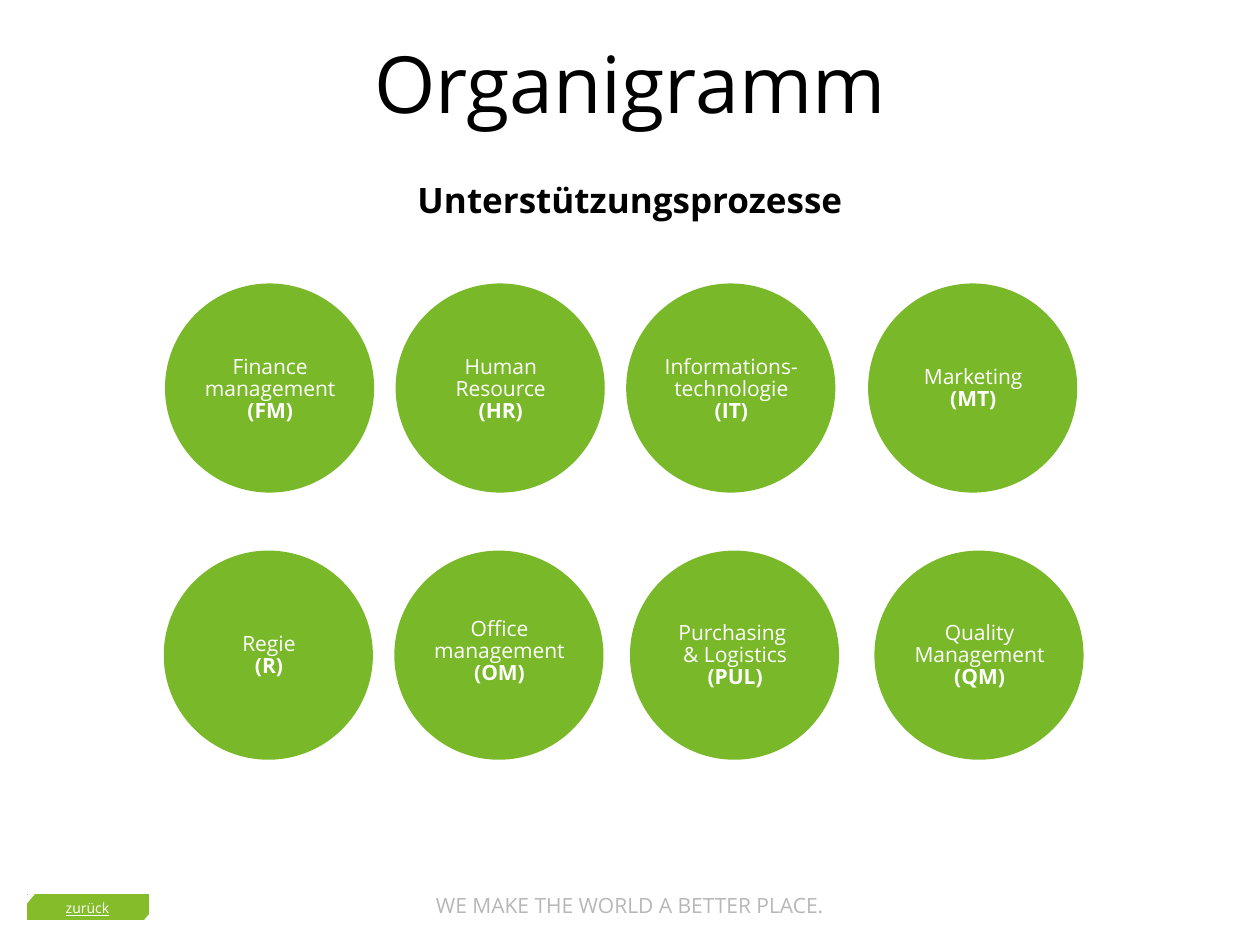
"""Build the Organigramm slide with its eight support processes."""
from pptx import Presentation
from pptx.dml.color import RGBColor
from pptx.enum.shapes import MSO_SHAPE
from pptx.enum.text import MSO_ANCHOR, PP_ALIGN
from pptx.util import Inches, Pt

CENTER, TOP = PP_ALIGN.CENTER, MSO_ANCHOR.TOP
OVAL, RECT = MSO_SHAPE.OVAL, MSO_SHAPE.RECTANGLE

THEME = {
    "font": "Open Sans",
    "black": RGBColor(0x00, 0x00, 0x00),
    "white": RGBColor(0xFF, 0xFF, 0xFF),
    "gray": RGBColor(0xB7, 0xB7, 0xB7),
    "green": RGBColor(0x79, 0xB8, 0x29),
    "button": RGBColor(0x84, 0xBC, 0x2A),
    "title": Pt(45),
    "subtitle": Pt(20),
    "label": Pt(12),
    "link": Pt(8),
}


def write(sp, lines, size, color, spacing=1.0, inset=0.1):
    tf = sp.text_frame
    tf.word_wrap = True
    tf.vertical_anchor = TOP
    tf.margin_left = tf.margin_right = Inches(0.1)
    tf.margin_top = tf.margin_bottom = Inches(inset)
    for i, line in enumerate(lines):
        p = tf.add_paragraph() if i else tf.paragraphs[0]
        p.text = line
        p.alignment = CENTER
        p.line_spacing = spacing
        p.font.name = THEME["font"]
        p.font.size = THEME[size]
        p.font.color.rgb = THEME[color]
        p.font.bold = False
    return tf.paragraphs[-1]


def add_solid(shapes, kind, box, color):
    sp = shapes.add_shape(kind, *map(Inches, box))
    sp.shadow.inherit = False
    sp.fill.solid()
    sp.fill.fore_color.rgb = THEME[color]
    sp.line.fill.background()
    return sp


prs = Presentation()
prs.slide_width, prs.slide_height = Inches(10), Inches(7.5)
s = prs.slides.add_slide(prs.slide_layouts[5])

tagline = s.shapes.add_textbox(Inches(0), Inches(6.98), Inches(10), Inches(0.31))
write(tagline, ["WE MAKE THE WORLD A BETTER PLACE."], "label", "gray")

title = s.shapes.title
title.left, title.top = Inches(0.34), Inches(0.23)
title.width, title.height = Inches(9.32), Inches(1.66)
write(title, ["Organigramm"], "title", "black", 0.95)

subtitle = s.shapes.add_textbox(Inches(0), Inches(1.34), Inches(10), Inches(0.63))
write(subtitle, ["Unterstützungsprozesse"], "subtitle", "black", 0.95).font.bold = True

rows = [
    (2.25, [
        (1.31, 2.73, ["Finance\nmanagement", "(FM)"]),
        (3.14, 2.73, ["Human", "Resource", "(HR)"]),
        (4.97, 2.73, ["Informations-", "technologie", "(IT)"]),
        (6.89, 2.81, ["Marketing", "(MT)"]),
    ]),
    (4.37, [
        (1.30, 4.93, ["Regie", "(R)"]),
        (3.13, 4.81, ["Office\nmanagement", "(OM)"]),
        (5.00, 4.84, ["Purchasing ", "& Logistics", "(PUL)"]),
        (6.94, 4.84, ["Quality", "Management", "(QM)"]),
    ]),
]
for top, processes in rows:
    for left, label_top, lines in processes:
        add_solid(s.shapes, OVAL, (left, top, 1.66, 1.66), "green")
for top, processes in rows:
    for left, label_top, lines in processes:
        label = s.shapes.add_textbox(
            Inches(left + 0.02), Inches(label_top), Inches(1.63), Inches(0.75))
        write(label, lines, "label", "white", 0.88).font.bold = True

button = s.shapes.add_group_shape()
face = add_solid(button.shapes, RECT, (0.22, 7.1, 0.96, 0.2), "button")
face.line.color.rgb = THEME["button"]
face.line.width = Pt(0.5)
link = button.shapes.add_textbox(Inches(0.32), Inches(7.09), Inches(0.75), Inches(0.24))
write(link, ["zurück"], "link", "white", inset=0.05).font.underline = True
for box in [(0.18, 7.1, 0.1, 0.04), (1.15, 7.26, 0.1, 0.09)]:
    corner = add_solid(button.shapes, RECT, box, "white")
    corner.rotation = 309.9

prs.save("out.pptx")
